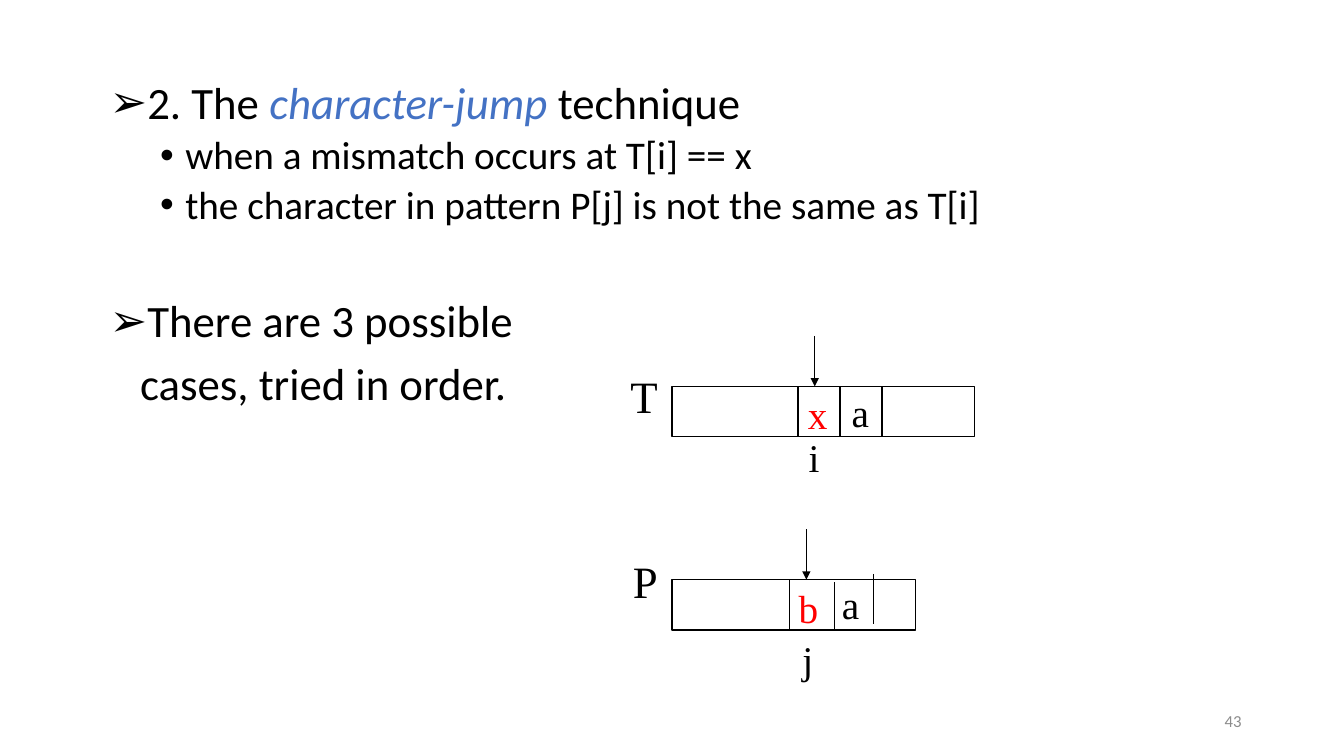
import pptx
import pptx.dml.color
import pptx.enum.dml
import pptx.enum.shapes
import pptx.enum.text
import pptx.oxml.ns
import pptx.util
from lxml import etree

Pt = pptx.util.Pt
ALIGN = pptx.enum.text.PP_ALIGN
MIDDLE = pptx.enum.text.MSO_ANCHOR.MIDDLE
BODY, SERIF = "Calibri", "Times New Roman"
COLORS = {"ink": "000000", "term": "4472C4", "miss": "FF0000", "page": "8C8C8C"}


def color(name):
    return pptx.dml.color.RGBColor.from_string(COLORS[name])


def add_sub(parent, tag, **attrs):
    return etree.SubElement(parent, pptx.oxml.ns.qn(tag), attrs)


def set_font(font, size, face, ink):
    font.size, font.name = Pt(size), face
    font.color.rgb = color(ink)


def add_box(slide, x, y, w, h):
    return slide.shapes.add_textbox(Pt(x), Pt(y), Pt(w), Pt(h)).text_frame


def add_label(slide, text, x, y, size=28, ink="ink"):
    """Add a letter centred on the point x, y."""
    w, h = 34, size * 1.45
    frame = add_box(slide, x - w / 2, y - h / 2, w, h)
    frame.vertical_anchor = MIDDLE
    frame.word_wrap = False
    para = frame.paragraphs[0]
    para.text, para.alignment = text, ALIGN.CENTER
    set_font(para.font, size, SERIF, ink)


def add_line(slide, x, top, end, arrow=False):
    """Add an upright line, with an arrowhead at its end on request."""
    kind = pptx.enum.shapes.MSO_CONNECTOR.STRAIGHT
    line = slide.shapes.add_connector(kind, Pt(x), Pt(top), Pt(x), Pt(end))
    line.line.color.rgb = color("ink")
    line.line.width = Pt(1)
    if arrow:
        add_sub(line.line._get_or_add_ln(), "a:tailEnd", type="triangle")
    add_sub(line._element.spPr, "a:effectLst")


def add_strip(slide, y, width, arrow, walls):
    """Add a string as a bar with cell walls and a pointer above it."""
    kind = pptx.enum.shapes.MSO_SHAPE.RECTANGLE
    bar = slide.shapes.add_shape(kind, Pt(480), Pt(y), Pt(width), Pt(36))
    bar.shadow.inherit = False
    bar.fill.background()
    bar.line.color.rgb = color("ink")
    bar.line.width = Pt(1)
    for x, top, end in walls:
        add_line(slide, x, y + top, y + end)
    add_line(slide, arrow, y - 36, y, arrow=True)


def add_item(para, runs, size, left, hang, before, bullet=None):
    props = para._p.get_or_add_pPr()
    props.set("marL", str(Pt(left)))
    props.set("indent", str(Pt(-hang)))
    if bullet:
        add_sub(props, "a:buFont", typeface="Arial")
        add_sub(props, "a:buChar", char=bullet)
    para.line_spacing = 0.9
    para.space_before = Pt(before)
    set_font(para.font, size, BODY, "ink")
    for text, term in runs:
        run = para.add_run()
        run.text = text
        if term:
            run.font.italic = True
            run.font.color.rgb = color("term")


def add_body(slide):
    frame = add_box(slide, 71.3, 54, 790, 324)
    frame.word_wrap = True
    title = [("2. The ", False), ("character-jump", True), (" technique", False)]
    items = [
        (title, 32, 18, 18, 0, "➢"),
        ([("when a mismatch occurs at T[i] == x", False)], 28, 54, 18, 5, "•"),
        ([("the character in pattern P[j] is not the same as T[i]", False)],
         28, 54, 18, 5, "•"),
        ([("There are 3 possible", False)], 32, 18, 18, 51, "➢"),
        ([("cases, tried in order.", False)], 32, 21.7, 0, 10),
    ]
    for n, item in enumerate(items):
        para = frame.add_paragraph() if n else frame.paragraphs[0]
        add_item(para, *item)


def add_page(slide, text):
    frame = add_box(slide, 678, 500.5, 216, 28.75)
    frame.vertical_anchor = MIDDLE
    frame.word_wrap = True
    para = frame.paragraphs[0]
    para.text, para.alignment = text, ALIGN.RIGHT
    set_font(para.font, 12, BODY, "page")


def main():
    deck = pptx.Presentation()
    deck.slide_width, deck.slide_height = Pt(960), Pt(540)
    slide = deck.slides.add_slide(deck.slide_layouts[6])
    add_body(slide)

    add_strip(slide, 276, 216, 582, [(x, 0, 36) for x in (570, 600, 630)])
    add_label(slide, "T", 460, 282.5, size=32)
    add_label(slide, "x", 584, 295.5, ink="miss")
    add_label(slide, "a", 614.5, 294)
    add_label(slide, "i", 581.5, 326.5)

    add_strip(slide, 414, 174, 576, [(564, 0, 36), (596, 2, 36), (624, -4, 32)])
    add_label(slide, "P", 461, 415, size=32)
    add_label(slide, "b", 577.5, 434.5, ink="miss")
    add_label(slide, "a", 607.5, 431)
    add_label(slide, "j", 577, 470.5)

    add_page(slide, "43")
    deck.save("out.pptx")


if __name__ == "__main__":
    main()
